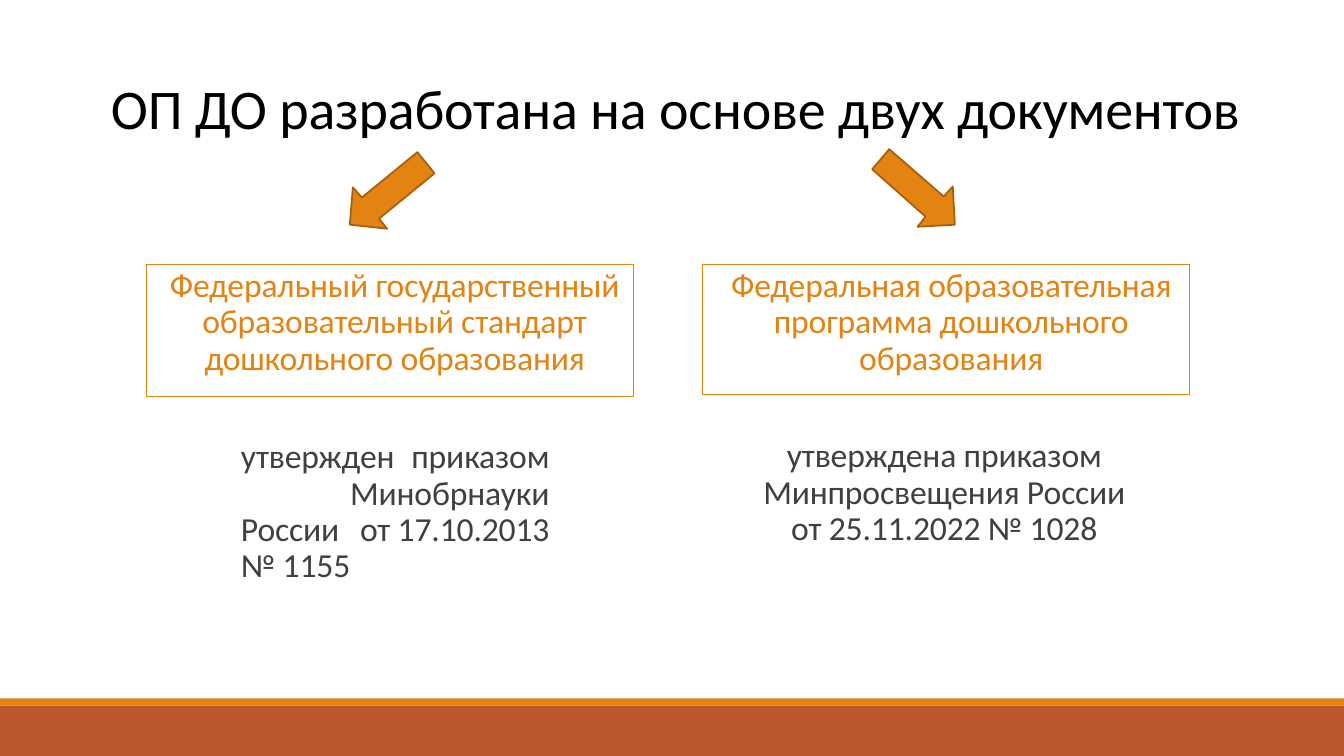
"""Build the slide about the two documents behind the preschool programme."""
from dataclasses import dataclass

from lxml.etree import SubElement
from pptx import Presentation
from pptx.dml.color import RGBColor
from pptx.enum.shapes import MSO_SHAPE
from pptx.enum.text import MSO_ANCHOR, MSO_AUTO_SIZE, PP_ALIGN
from pptx.oxml.ns import qn
from pptx.util import Inches, Pt

TITLE = "ОП ДО разработана на основе двух документов"
DOCUMENTS = [
    {
        "name": "Федеральный государственный\vобразовательный стандарт\vдошкольного образования",
        "name_box": (1.45, 2.62, 4.83, 1.31),
        "order": "утвержден\tприказом\v\tМинобрнауки\vРоссии\tот 17.10.2013\v№ 1155",
        "order_box": (2.39, 4.31, 3.2, 1.5),
        "order_align": PP_ALIGN.LEFT,
        "tab": 3.06,
        "arrow": [(4.14, 1.51), (3.59, 1.96), (3.5, 1.86), (3.47, 2.23),
                  (3.84, 2.27), (3.76, 2.17), (4.31, 1.72)],
    },
    {
        "name": "Федеральная образовательная\vпрограмма дошкольного\vобразования",
        "name_box": (6.97, 2.62, 4.83, 1.29),
        "order": "утверждена приказом\vМинпросвещения России\vот 25.11.2022 № 1028",
        "order_box": (7.54, 4.3, 3.65, 1.15),
        "order_align": PP_ALIGN.CENTER,
        "tab": None,
        "arrow": [(8.82, 1.48), (8.65, 1.68), (9.18, 2.15), (9.1, 2.25),
                  (9.47, 2.23), (9.45, 1.85), (9.36, 1.95)],
    },
]
WIDTH, HEIGHT = 13.33, 7.5
BAND_TOP, STRIPE = 7, 0.07


@dataclass(frozen=True)
class Theme:
    font: str = "Calibri"
    title_size: int = 40
    body_size: int = 24
    leading: float = 25.9
    tracking: int = -10
    black: str = "000000"
    gray: str = "404040"
    orange: str = "E38312"
    edge: str = "A75F09"
    rust: str = "BC572C"


THEME = Theme()


def rgb(color):
    return RGBColor.from_string(color)


def place(sp, box):
    sp.left, sp.top, sp.width, sp.height = map(Inches, box)


def paint(sp, fill=None, line=None, weight=0.75):
    sp.shadow.inherit = False
    if fill:
        sp.fill.solid()
        sp.fill.fore_color.rgb = rgb(fill)
    else:
        sp.fill.background()
    if line:
        sp.line.color.rgb = rgb(line)
        sp.line.width = Pt(weight)
    else:
        sp.line.fill.background()


def write(sp, text, size, color, align, before, top, left=0):
    tf = sp.text_frame
    tf.word_wrap = True
    tf.auto_size = MSO_AUTO_SIZE.NONE
    tf.vertical_anchor = MSO_ANCHOR.TOP
    tf.margin_left, tf.margin_top = Inches(left), Inches(top)
    tf.margin_right = tf.margin_bottom = 0
    p = tf.paragraphs[0]
    p.text = text
    p.alignment = align
    p.space_before = Pt(before)
    for r in p.runs:
        r.font.name = THEME.font
        r.font.size = Pt(size)
        r.font.color.rgb = rgb(color)
        r._r.get_or_add_rPr().set("spc", str(THEME.tracking))
    return p


def add_right_tab(p, position):
    tabs = SubElement(p._p.get_or_add_pPr(), qn("a:tabLst"))
    SubElement(tabs, qn("a:tab"), pos=str(Inches(position)), algn="r")


def add_rect(s, box):
    return s.shapes.add_shape(MSO_SHAPE.RECTANGLE, *map(Inches, box))


def add_arrow(s, corners):
    start, *rest = [(Inches(x), Inches(y)) for x, y in corners]
    outline = s.shapes.build_freeform(*start)
    outline.add_line_segments(rest, close=True)
    paint(outline.convert_to_shape(), THEME.orange, THEME.edge, 1.25)


def add_document(s, doc):
    sp = add_rect(s, doc["name_box"])
    paint(sp, line=THEME.orange)
    p = write(sp, doc["name"], THEME.body_size, THEME.orange,
              PP_ALIGN.CENTER, 2.4, 0.04, 0.1)
    p.line_spacing = Pt(THEME.leading)

    sp = s.shapes.add_textbox(*map(Inches, doc["order_box"]))
    p = write(sp, doc["order"], THEME.body_size, THEME.gray,
              doc["order_align"], 4.2, 0.05)
    p.line_spacing = Pt(THEME.leading)
    if doc["tab"]:
        add_right_tab(p, doc["tab"])

    add_arrow(s, doc["arrow"])


def main():
    prs = Presentation()
    prs.slide_width, prs.slide_height = Inches(WIDTH), Inches(HEIGHT)
    s = prs.slides.add_slide(prs.slide_layouts[5])
    title = s.shapes.title
    place(title, (1.1, 0.72, 11.6, 0.69))
    write(title, TITLE, THEME.title_size, THEME.black, PP_ALIGN.LEFT, 0.9, 0.01)
    paint(add_rect(s, (0, BAND_TOP, WIDTH, HEIGHT - BAND_TOP)), THEME.rust)
    paint(add_rect(s, (0, BAND_TOP - STRIPE, WIDTH, STRIPE)), THEME.orange)
    for doc in DOCUMENTS:
        add_document(s, doc)
    prs.save("out.pptx")


if __name__ == "__main__":
    main()
